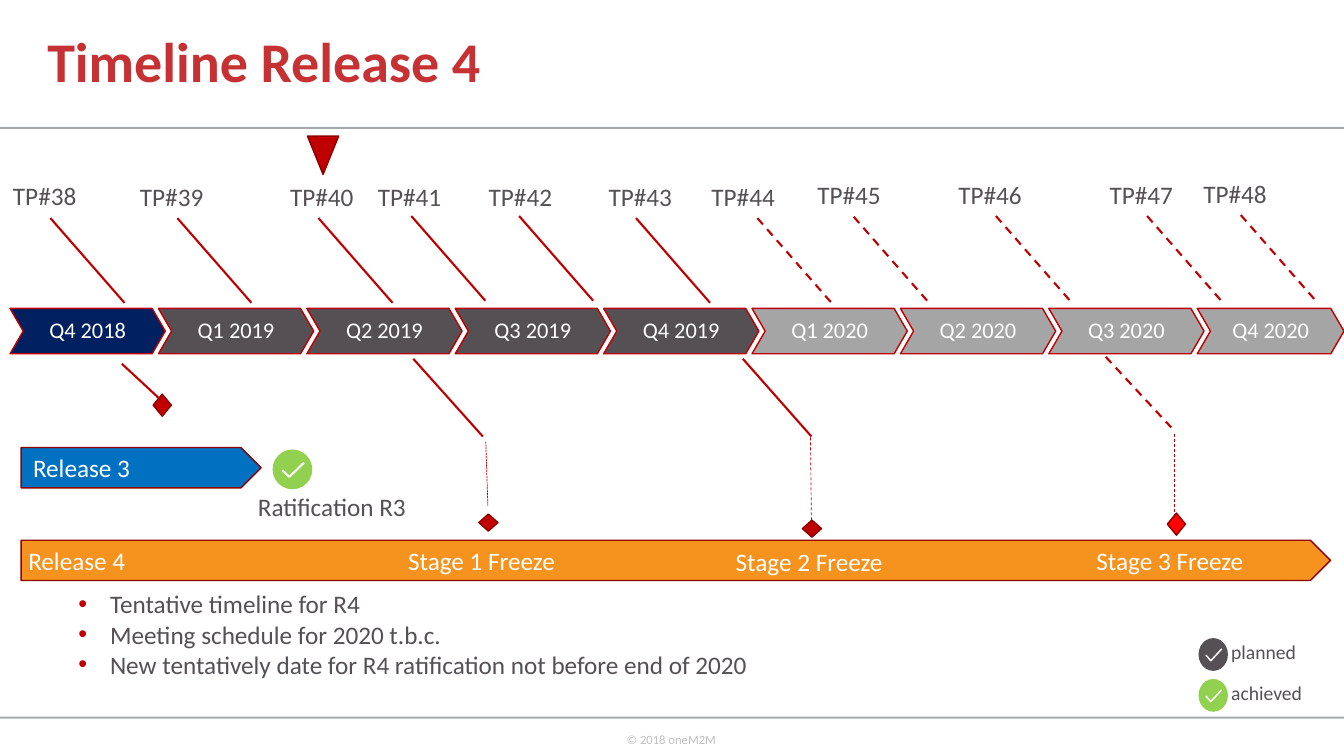
import collections

import lxml.etree
import pptx
import pptx.dml.color
import pptx.enum.dml
import pptx.enum.shapes
import pptx.enum.text
import pptx.oxml.ns
import pptx.util

Pt = pptx.util.Pt
RGBColor = pptx.dml.color.RGBColor
SHAPE = pptx.enum.shapes.MSO_SHAPE
DASH = pptx.enum.dml.MSO_LINE
ANCHOR = pptx.enum.text.MSO_ANCHOR
ALIGN = pptx.enum.text.PP_ALIGN

WHITE = RGBColor(0xFF, 0xFF, 0xFF)
TITLE_RED = RGBColor(0xC6, 0x31, 0x33)
RED = RGBColor(0xC0, 0x00, 0x00)
BRIGHT_RED = RGBColor(0xFF, 0x00, 0x00)
DARK_RED = RGBColor(0x8E, 0x00, 0x00)
NAVY = RGBColor(0x00, 0x20, 0x60)
BLUE = RGBColor(0x00, 0x70, 0xC0)
ORANGE = RGBColor(0xF6, 0x92, 0x1E)
GREEN = RGBColor(0x92, 0xD0, 0x50)
DARK_GREY = RGBColor(0x54, 0x50, 0x54)
MID_GREY = RGBColor(0xA5, 0xA5, 0xA5)
RULE_GREY = RGBColor(0xA7, 0xA9, 0xAC)
PALE_GREY = RGBColor(0xBF, 0xBF, 0xBF)

Box = collections.namedtuple("Box", "left top width height")
Meeting = collections.namedtuple("Meeting", "name label_x label_y line_x line_y dash")
Milestone = collections.namedtuple("Milestone", "slant dash drop drop_dash diamond fill")

QUARTERS = [
    ("Q4 2018", NAVY), ("Q1 2019", DARK_GREY), ("Q2 2019", DARK_GREY),
    ("Q3 2019", DARK_GREY), ("Q4 2019", DARK_GREY), ("Q1 2020", MID_GREY),
    ("Q2 2020", MID_GREY), ("Q3 2020", MID_GREY), ("Q4 2020", MID_GREY),
]
# Offsets from the top left corner of the meeting band
MEETINGS = [
    Meeting("TP#38", 2.2, 1.5, 36, 32, None),
    Meeting("TP#39", 92.9, 2.2, 126.7, 32, None),
    Meeting("TP#40", 200.2, 2.2, 227.5, 32, None),
    Meeting("TP#41", 262.8, 2.2, 293.8, 30.5, None),
    Meeting("TP#42", 342, 2.2, 370.8, 30.5, None),
    Meeting("TP#43", 427.7, 2.2, 454.3, 32, None),
    Meeting("TP#44", 501.1, 2.2, 541, 32, DASH.DASH),
    Meeting("TP#45", 576.7, 0.8, 609.8, 31, DASH.DASH),
    Meeting("TP#46", 677.5, 0.8, 711.4, 30.5, DASH.DASH),
    Meeting("TP#47", 785.5, 0.8, 819.4, 30.5, DASH.DASH),
    Meeting("TP#48", 852.5, 0, 886.3, 29.8, DASH.DASH),
]
# Offsets from the top left corner of the milestone band
MILESTONES = [
    Milestone((87.1, 7.9, 117.4, 36), None, None, None,
              Box(109.4, 29.5, 13, 15.8), RED),
    Milestone((295.2, 4.3, 344.9, 59.8), None, (347, 63.4, 348.5, 109.4),
              DASH.SQUARE_DOT, Box(342, 115.2, 13.7, 12.2), RED),
    Milestone((530.6, 4.3, 579.6, 59.8), None, (578.9, 60.5, 579.6, 119.5),
              DASH.DASH, Box(573.1, 119.5, 13.7, 12.2), RED),
    Milestone((789.8, 2.9, 836.6, 53.3), DASH.DASH, (838.8, 58.3, 838.8, 117.4),
              DASH.DASH, Box(833.8, 114.5, 13, 15.8), BRIGHT_RED),
]
NOTES = [
    "Tentative timeline for R4",
    "Meeting schedule for 2020 t.b.c.",
    "New tentatively date for R4 ratification not before end of 2020",
]


def points(box):
    return [Pt(length) for length in box]


def inside(box, offset):
    """Move a box given by its offset to its place within a region."""
    return offset._replace(left=box.left + offset.left, top=box.top + offset.top)


def write(para, text, size, color, bold=False):
    span = para.add_run()
    span.text = text
    span.font.name = "Calibri"
    span.font.size = Pt(size)
    span.font.bold = bold
    span.font.color.rgb = color


def add_label(page, box, text, color=DARK_GREY, size=18):
    frame = page.shapes.add_textbox(*points(box)).text_frame
    frame.word_wrap = False
    write(frame.paragraphs[0], text, size, color)


def add_solid(page, kind, box, fill, outline=None):
    shape = page.shapes.add_shape(kind, *points(box))
    shape.shadow.inherit = False
    shape.fill.solid()
    shape.fill.fore_color.rgb = fill
    if outline is None:
        shape.line.fill.background()
    else:
        shape.line.color.rgb = outline
        shape.line.width = Pt(1)
    return shape


def add_line(page, box, ends, width, dash):
    """Draw a red line between two points, offset from the box."""
    x1, y1, x2, y2 = ends
    line = page.shapes.add_connector(
        pptx.enum.shapes.MSO_CONNECTOR.STRAIGHT,
        Pt(box.left + x1), Pt(box.top + y1), Pt(box.left + x2), Pt(box.top + y2))
    line.line.color.rgb = RED
    line.line.width = Pt(width)
    if dash is not None:
        line.line.dash_style = dash
    lxml.etree.SubElement(line._element.spPr, pptx.oxml.ns.qn("a:effectLst"))


def add_check_badge(page, box, fill):
    add_solid(page, SHAPE.OVAL, box, fill)
    ticks = [(Pt(box.left + box.width * x), Pt(box.top + box.height * y))
             for x, y in [(0.25, 0.52), (0.42, 0.69), (0.79, 0.33)]]
    builder = page.shapes.build_freeform(*ticks[0])
    builder.add_line_segments(ticks[1:], close=False)
    check = builder.convert_to_shape()
    check.shadow.inherit = False
    check.fill.background()
    check.line.color.rgb = WHITE
    check.line.width = Pt(box.width / 20)


def add_frame(page, box):
    for top in (90.7, 511.9):
        add_solid(page, SHAPE.RECTANGLE, Box(box.left, box.top + top, box.width, 1.4),
                  RULE_GREY)
    add_label(page, inside(box, Box(440.6, 519.1, 78.5, 28.8)),
              "© 2018 oneM2M", PALE_GREY, 9)


def add_title(page, box):
    title = page.shapes.title
    title.left, title.top, title.width, title.height = points(box)
    title.text_frame.vertical_anchor = ANCHOR.MIDDLE
    para = title.text_frame.paragraphs[0]
    para.alignment = ALIGN.LEFT
    para.line_spacing = 0.9
    write(para, "Timeline Release 4", 40, TITLE_RED, bold=True)


def add_meetings(page, box):
    for meeting in MEETINGS:
        add_label(page, inside(box, Box(meeting.label_x, meeting.label_y, 60.5, 28.8)),
                  meeting.name)
        x, y = meeting.line_x, meeting.line_y
        add_line(page, box, (x, y, x + 52.9, y + 60.5), 1.5, meeting.dash)
    marker = add_solid(page, SHAPE.ISOSCELES_TRIANGLE,
                       inside(box, Box(219.6, -26.6, 22.3, 27.4)), RED, DARK_RED)
    marker.rotation = 180


def add_quarters(page, box):
    pitch, width = 106, 110.9
    for index, (name, fill) in enumerate(QUARTERS):
        left = box.left + index * pitch
        place = Box(left, box.top, min(width, box.left + box.width - left), box.height)
        chevron = add_solid(page, SHAPE.CHEVRON, place, fill, RED)
        chevron.adjustments[0] = 0.29
        frame = chevron.text_frame
        frame.margin_left = frame.margin_right = Pt(5.8)
        frame.margin_top = frame.margin_bottom = Pt(5.8)
        frame.vertical_anchor = ANCHOR.MIDDLE
        para = frame.paragraphs[0]
        para.alignment = ALIGN.CENTER
        para.line_spacing = 0.9
        write(para, name, 16, WHITE)


def add_releases(page, box):
    bar = Box(0, 0, 171.4, 28.8)
    add_solid(page, SHAPE.PENTAGON, inside(box, bar), BLUE, DARK_RED)
    add_solid(page, SHAPE.PENTAGON,
              inside(box, bar._replace(top=66.2, width=box.width)), ORANGE, DARK_RED)
    add_check_badge(page, inside(box, Box(179.6, 1.4, 28.4, 28.4)), GREEN)
    for text, left, top, width, color in [
        ("Release 3", 1.4, 0, 85, WHITE),
        ("Ratification R3", 162, 27.4, 121.7, DARK_GREY),
        ("Release 4", -2, 66.2, 87.8, WHITE),
        ("Stage 1 Freeze", 269.3, 66.2, 121, WHITE),
        ("Stage 2 Freeze", 503.3, 67, 121, WHITE),
        ("Stage 3 Freeze", 761, 66.2, 121, WHITE),
    ]:
        add_label(page, inside(box, Box(left, top, width, 28.8)), text, color)


def add_milestones(page, box):
    for stone in MILESTONES:
        add_line(page, box, stone.slant, 1.5, stone.dash)
        if stone.drop:
            add_line(page, box, stone.drop, 0.5, stone.drop_dash)
        add_solid(page, SHAPE.DIAMOND, inside(box, stone.diamond), stone.fill, DARK_RED)


def add_notes(page, box):
    frame = page.shapes.add_textbox(*points(box)).text_frame
    frame.word_wrap = True
    qn = pptx.oxml.ns.qn
    for index, text in enumerate(NOTES):
        para = frame.add_paragraph() if index else frame.paragraphs[0]
        properties = para._p.get_or_add_pPr()
        properties.set("marL", str(Pt(22.5)))
        properties.set("indent", str(-Pt(22.5)))
        color = lxml.etree.SubElement(properties, qn("a:buClr"))
        lxml.etree.SubElement(color, qn("a:srgbClr")).set("val", str(RED))
        lxml.etree.SubElement(properties, qn("a:buFont")).set("typeface", "Arial")
        lxml.etree.SubElement(properties, qn("a:buChar")).set("char", "•")
        write(para, text, 18, DARK_GREY)


def add_legend(page, box):
    for index, (text, fill) in enumerate([("planned", DARK_GREY), ("achieved", GREEN)]):
        top = index * 29.2
        add_check_badge(page, inside(box, Box(0, top + 2.4, 21, 23.4)), fill)
        add_label(page, inside(box, Box(16.2, top, 70, 24.5)), text, size=14)


def main():
    deck = pptx.Presentation()
    deck.slide_width, deck.slide_height = Pt(960), Pt(540)
    page = deck.slides.add_slide(deck.slide_layouts[5])
    add_frame(page, Box(0, 0, 960, 540))
    add_title(page, Box(26.6, 0, 778.3, 92.2))
    add_meetings(page, Box(0, 123.8, 960, 92.2))
    add_quarters(page, Box(7.2, 220.3, 952.8, 32.4))
    add_releases(page, Box(15.1, 319.7, 935.3, 95))
    add_milestones(page, Box(0, 252, 960, 132))
    add_notes(page, Box(49, 416.9, 532, 94.3))
    add_legend(page, Box(856.1, 453.4, 87, 54))
    deck.save("out.pptx")


if __name__ == "__main__":
    main()
